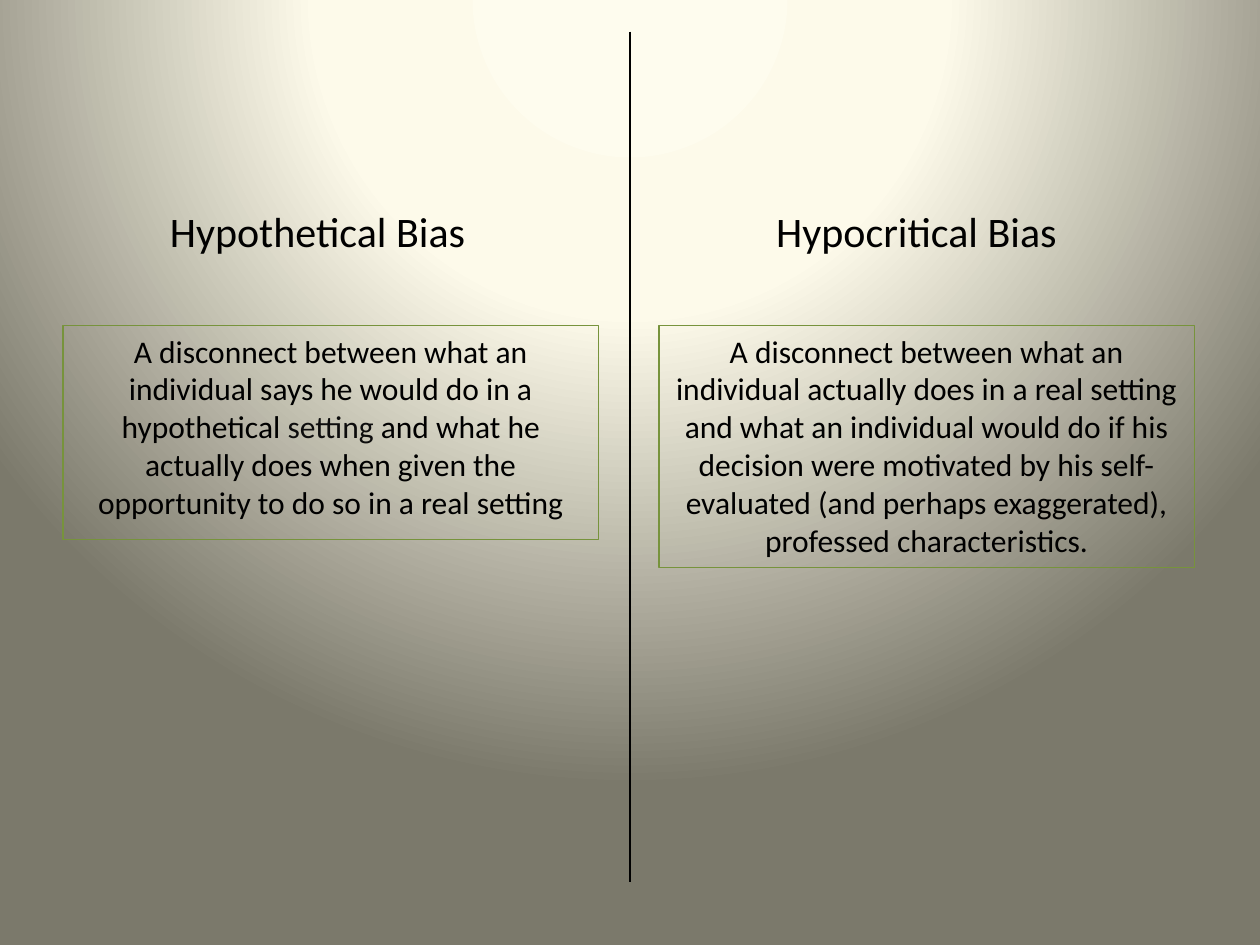
import pptx
import pptx.dml.color
import pptx.enum.shapes
import pptx.enum.text
import pptx.oxml
import pptx.oxml.ns
import pptx.util
from lxml import etree

Pt = pptx.util.Pt
BLACK, SOFT_BLACK, GREEN = "000000", "0D0D0D", "77933C"
BOX_TOP, BOX_WIDTH = 186, 306
HEADING_TOP, HEADING_HEIGHT = 114, 36

# Each column: heading, heading left and width, box left and height, text runs
COLUMNS = [
    ("Hypothetical Bias", 90, 192, 36, 122.4, [
        ("A disconnect between what an individual says he would do in a "
         "hypothetical ", BLACK),
        ("setting", SOFT_BLACK),
        (" and what he actually does when given the opportunity to do so "
         "in a real setting", BLACK)]),
    ("Hypocritical Bias", 436.5, 186, 376.5, 138.5, [
        ("A disconnect between what an individual actually does in a real "
         "setting and what an individual would do if his decision were "
         "motivated by his self-evaluated (and perhaps exaggerated), "
         "professed characteristics.", BLACK)]),
]


def rgb(color):
    return pptx.dml.color.RGBColor.from_string(color)


def set_background(slide, stops):
    """Circular gradient centred above the top edge of the slide."""
    gs = "".join(f'<a:gs pos="{pos * 1000}"><a:srgbClr val="{color}"/></a:gs>'
                 for pos, color in stops)
    bg = pptx.oxml.parse_xml(
        f'<p:bg {pptx.oxml.ns.nsdecls("p", "a")}><p:bgPr>'
        f'<a:gradFill rotWithShape="1"><a:gsLst>{gs}</a:gsLst>'
        '<a:path path="circle"><a:fillToRect l="50000" t="-80000" '
        'r="50000" b="180000"/></a:path></a:gradFill>'
        '<a:effectLst/></p:bgPr></p:bg>')
    slide.element.cSld.insert(0, bg)


def write_runs(sp, runs, size, align):
    tf = sp.text_frame
    tf.word_wrap = True
    tf.vertical_anchor = pptx.enum.text.MSO_ANCHOR.TOP
    p = tf.paragraphs[0]
    p.alignment = align
    for text, color in runs:
        r = p.add_run()
        r.text = text
        r.font.name = "Calibri"
        r.font.size = Pt(size)
        r.font.color.rgb = rgb(color)


def add_heading(slide, text, left, width):
    sp = slide.shapes.add_textbox(Pt(left), Pt(HEADING_TOP), Pt(width),
                                  Pt(HEADING_HEIGHT))
    write_runs(sp, [(text, BLACK)], 24, pptx.enum.text.PP_ALIGN.LEFT)


def add_definition(slide, runs, left, height):
    sp = slide.shapes.add_shape(pptx.enum.shapes.MSO_SHAPE.RECTANGLE, Pt(left),
                                Pt(BOX_TOP), Pt(BOX_WIDTH), Pt(height))
    sp.shadow.inherit = False
    sp.fill.background()
    sp.line.color.rgb = rgb(GREEN)
    sp.line.width = Pt(0.75)
    write_runs(sp, runs, 18, pptx.enum.text.PP_ALIGN.CENTER)


def add_divider(slide, x, top, bottom):
    line = slide.shapes.add_connector(pptx.enum.shapes.MSO_CONNECTOR.STRAIGHT,
                                      Pt(x), Pt(top), Pt(x), Pt(bottom))
    line.line.color.rgb = rgb(BLACK)
    line.line.width = Pt(0.75)
    etree.SubElement(line._element.spPr, pptx.oxml.ns.qn("a:effectLst"))


def main():
    prs = pptx.Presentation()
    prs.slide_width, prs.slide_height = Pt(720), Pt(540)
    slide = prs.slides.add_slide(prs.slide_layouts[6])
    set_background(slide, [(0, "FEFCEE"), (40, "FDFAEA"), (100, "7B796B")])

    # Two columns, each a heading over a framed definition
    for heading, head_left, head_width, box_left, height, runs in COLUMNS:
        add_heading(slide, heading, head_left, head_width)
        add_definition(slide, runs, box_left, height)

    # Vertical rule between the columns
    add_divider(slide, 360, 18, 504)
    prs.save("out.pptx")


if __name__ == "__main__":
    main()
